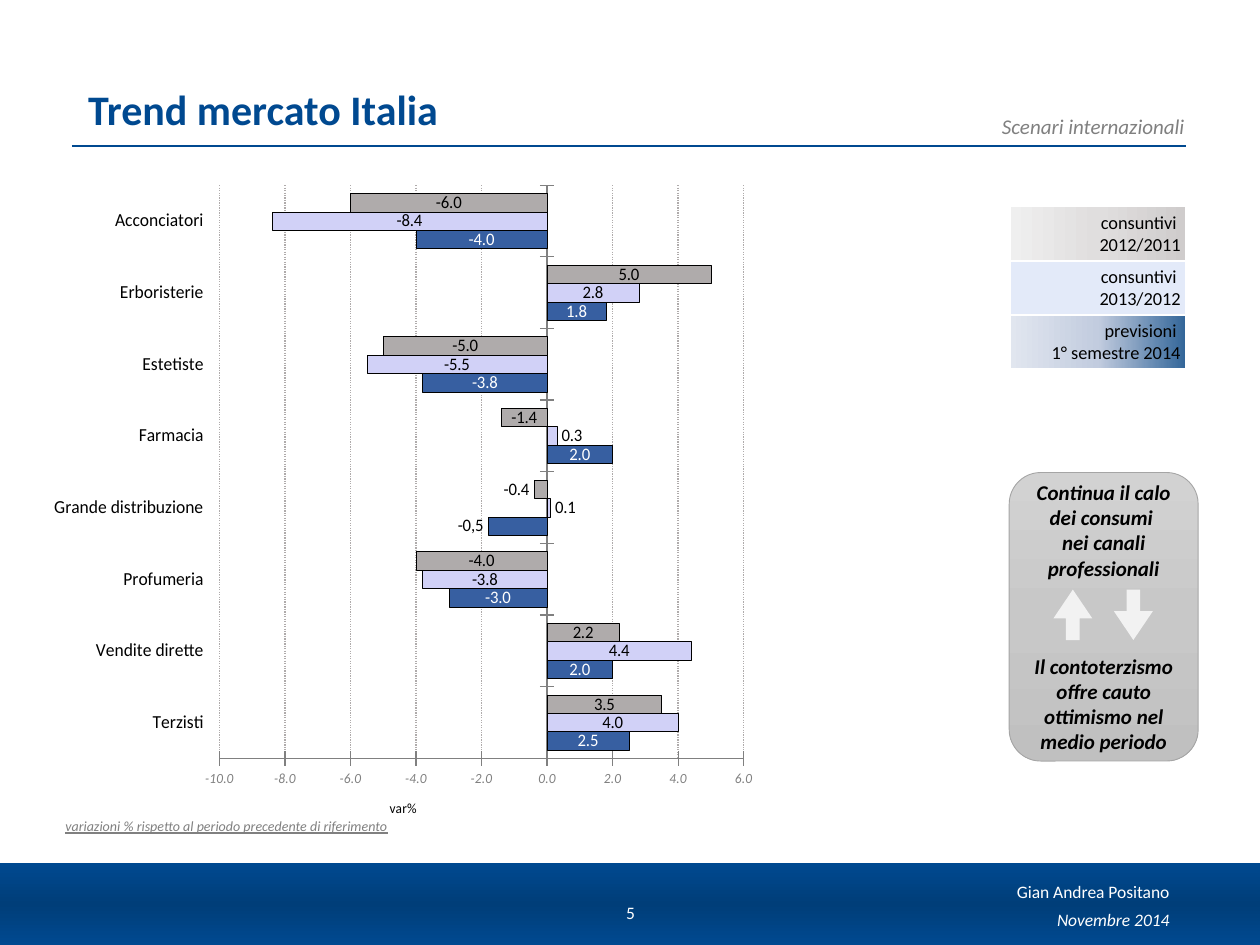
from lxml.etree import SubElement
from pptx import Presentation
from pptx.chart.data import CategoryChartData
from pptx.dml.color import RGBColor
from pptx.enum.chart import XL_CHART_TYPE, XL_LABEL_POSITION, XL_TICK_LABEL_POSITION, XL_TICK_MARK
from pptx.enum.dml import MSO_LINE
from pptx.enum.shapes import MSO_CONNECTOR, MSO_SHAPE
from pptx.enum.text import MSO_ANCHOR, PP_ALIGN
from pptx.oxml import parse_xml
from pptx.oxml.ns import nsdecls, qn
from pptx.util import Inches, Pt

BLUE, GRAY, WHITE, BLACK = "004990", "808080", "FFFFFF", "000000"
CHANNELS = ["Terzisti ", "Vendite dirette ", "Profumeria ", "Grande distribuzione ",
            "Farmacia ", "Estetiste ", "Erboristerie ", "Acconciatori "]
SERIES = [
    ("Series 1", [2.5, 2, -3, -1.8, 2, -3.8, 1.8, -4], "375FA1", WHITE, {3: "-0,5"}),
    ("Series 2", [4, 4.4, -3.8, 0.1, 0.3, -5.5, 2.8, -8.4], "D1D1F7", BLACK, {3: None, 4: None}),
    ("Series 3", [3.5, 2.2, -4, -0.4, -1.4, -5, 5, -6], "AFABAB", BLACK, {3: None}),
]
PERIODS = [
    ("consuntivi \n2012/2011", ["CFCCCC", "E0DEDE", "EFEFEF"]),
    ("consuntivi \n2013/2012", ["E3EAF9"]),
    ("previsioni \n1° semestre 2014", ["336699", "C2CCDF", "E1E6EF"]),
]


def rgb(value):
    """Return the colour for a hex string."""
    return RGBColor.from_string(value)


def style_font(font, size, color=BLACK, bold=False, italic=False, underline=False):
    """Set typeface, size, colour and emphasis of a font."""
    font.name, font.size = "Calibri", Pt(size)
    font.color.rgb = rgb(color)
    font.bold, font.italic = bold, italic
    if underline:
        font.underline = True


def write(paragraph, text, align, size, **style):
    """Write text into a paragraph, with a line break at each newline."""
    paragraph.alignment = align
    for index, line in enumerate(text.split("\n")):
        if index:
            paragraph.add_line_break()
        run = paragraph.add_run()
        run.text = line
        style_font(run.font, size, **style)


def add_text(slide, box, text, size, align=PP_ALIGN.LEFT, anchor=MSO_ANCHOR.TOP, side=0.1, edge=0.05, **style):
    """Add a wrapping text box."""
    frame = slide.shapes.add_textbox(*map(Inches, box)).text_frame
    frame.word_wrap, frame.vertical_anchor = True, anchor
    frame.margin_left = frame.margin_right = Inches(side)
    frame.margin_top = frame.margin_bottom = Inches(edge)
    write(frame.paragraphs[0], text, align, size, **style)


def apply_fill(fill, properties, colors, angle=90):
    """Fill with one colour or with an evenly spaced linear gradient."""
    if len(colors) == 1:
        fill.solid()
        fill.fore_color.rgb = rgb(colors[0])
        return
    fill.background()
    gradient = parse_xml(f'<a:gradFill {nsdecls("a")} rotWithShape="1"><a:gsLst/>'
                         f'<a:lin ang="{angle * 60000}" scaled="0"/></a:gradFill>')
    for index, color in enumerate(colors):
        stop = SubElement(gradient[0], qn("a:gs"), pos=str(100000 * index // (len(colors) - 1)))
        SubElement(stop, qn("a:srgbClr"), val=color)
    properties.replace(properties.find(qn("a:noFill")), gradient)


def add_shape(slide, kind, box, colors, line=None, adjustments=()):
    """Add a filled preset shape."""
    shape = slide.shapes.add_shape(kind, *map(Inches, box))
    shape.shadow.inherit = False
    apply_fill(shape.fill, shape._element.spPr, colors)
    if line:
        shape.line.color.rgb = rgb(line)
        shape.line.width = Pt(0.5)
    else:
        shape.line.fill.background()
    for index, value in enumerate(adjustments):
        shape.adjustments[index] = value


def add_rule(slide, left, right, top):
    """Add the thin line under the title."""
    rule = slide.shapes.add_connector(MSO_CONNECTOR.STRAIGHT, *map(Inches, (left, top, right, top)))
    rule.line.color.rgb = rgb(BLUE)
    rule.line.width = Pt(0.75)
    SubElement(rule._element.spPr, qn("a:effectLst"))


def add_legend(slide, left, top, width, row_height):
    """Add the table that explains the bar colours."""
    size = (left, top, width, row_height * len(PERIODS))
    table = slide.shapes.add_table(len(PERIODS), 1, *map(Inches, size)).table
    table.first_row = table.horz_banding = False
    for row, (text, colors) in enumerate(PERIODS):
        cell = table.cell(row, 0)
        cell.margin_left = cell.margin_right = cell.margin_top = cell.margin_bottom = Inches(0.04)
        write(cell.text_frame.paragraphs[0], text, PP_ALIGN.RIGHT, 10.5)
        properties = cell._tc.get_or_add_tcPr()
        apply_fill(cell.fill, properties, colors, 180)
        for index, side in enumerate("LRTB"):
            properties.insert(index, parse_xml(
                f'<a:ln{side} {nsdecls("a")} w="12700"><a:solidFill>'
                f'<a:srgbClr val="{WHITE}"/></a:solidFill></a:ln{side}>'))


def style_series(series, color, label_color, outside):
    """Colour the bars and place their value labels."""
    series.format.fill.solid()
    series.format.fill.fore_color.rgb = rgb(color)
    series.format.line.color.rgb = rgb(BLACK)
    series.format.line.width = Pt(0.25)
    series.invert_if_negative = False
    labels = series.data_labels
    labels.show_value = True
    labels.number_format, labels.number_format_is_linked = "0.0", False
    labels.position = XL_LABEL_POSITION.CENTER
    style_font(labels.font, 10, label_color)
    for point, text in outside.items():
        label = series.points[point].data_label
        if text:
            write(label.text_frame.paragraphs[0], text, None, 10)
        else:
            style_font(label.font, 10)
        label.position = XL_LABEL_POSITION.OUTSIDE_END


def style_axes(chart):
    """Set scale, ticks, gridlines and fonts of both axes."""
    category, value = chart.category_axis, chart.value_axis
    category.tick_label_position = XL_TICK_LABEL_POSITION.LOW
    style_font(category.tick_labels.font, 10.5)
    value.minimum_scale, value.maximum_scale, value.major_unit = -10, 6, 2
    value.tick_labels.number_format = "#,##0.0"
    value.tick_labels.number_format_is_linked = False
    style_font(value.tick_labels.font, 8, GRAY, italic=True)
    write(value.axis_title.text_frame.paragraphs[0], "var%", None, 8)
    grid = value.major_gridlines.format.line
    grid.color.rgb, grid.width, grid.dash_style = rgb("AFABAB"), Pt(0.75), MSO_LINE.ROUND_DOT
    for axis in (category, value):
        axis.major_tick_mark = XL_TICK_MARK.CROSS
        axis.format.line.color.rgb = rgb(GRAY)


def add_trend_chart(slide, box):
    """Add the bar chart of changes by sales channel."""
    data = CategoryChartData()
    data.categories = CHANNELS
    for name, values, *_ in SERIES:
        data.add_series(name, values)
    chart = slide.shapes.add_chart(XL_CHART_TYPE.BAR_CLUSTERED, *map(Inches, box), data).chart
    chart.has_legend = chart.has_title = False
    style_font(chart.font, 10.5)
    plot = chart.plots[0]
    plot.gap_width, plot.overlap, plot.vary_by_categories = 88, 0, False
    for series, (_, _, color, label_color, outside) in zip(plot.series, SERIES):
        style_series(series, color, label_color, outside)
    style_axes(chart)
    area = chart._chartSpace.chart.plotArea
    for old in area.findall(qn("c:layout")):
        area.remove(old)
    layout = parse_xml(f'<c:layout {nsdecls("c")}><c:manualLayout/></c:layout>')
    for tag, setting in (("layoutTarget", "inner"), ("xMode", "edge"), ("yMode", "edge"),
                         ("x", "0.18"), ("y", "0.04"), ("w", "0.72"), ("h", "0.865")):
        SubElement(layout[0], qn(f"c:{tag}"), val=setting)
    area.insert(0, layout)


def main():
    """Build the slide and save it."""
    presentation = Presentation()
    presentation.slide_width, presentation.slide_height = Inches(10), Inches(7.5)
    slide = presentation.slides.add_slide(presentation.slide_layouts[6])
    right, center, middle = PP_ALIGN.RIGHT, PP_ALIGN.CENTER, MSO_ANCHOR.MIDDLE
    add_rule(slide, 0.57, 9.41, 1.16)
    add_text(slide, (6.1, 0.85, 3.4, 0.3), "Scenari internazionali", 12, right, color=GRAY, italic=True)
    add_shape(slide, MSO_SHAPE.RECTANGLE, (-0.19, 6.85, 10.3, 0.65), [BLUE, "003E79", BLUE])
    add_text(slide, (7.86, 7.19, 1.52, 0.21), "Novembre 2014", 10, right, middle, color=WHITE, italic=True)
    add_text(slide, (7.85, 6.94, 1.53, 0.31), "Gian Andrea Positano", 10, right, color=WHITE)
    add_text(slide, (4.72, 7.04, 0.57, 0.4), "5", 10, center, middle, color=WHITE)
    add_text(slide, (0.5, 0.11, 9, 0.95), "Trend mercato Italia", 24, anchor=MSO_ANCHOR.BOTTOM,
             side=0.2, edge=0, color=BLUE, bold=True)
    add_text(slide, (0.42, 6.44, 3.01, 0.24), "variazioni % rispetto al periodo precedente di riferimento",
             8, color=GRAY, italic=True, underline=True)
    add_trend_chart(slide, (0.43, 1.26, 6.05, 5.26))
    add_shape(slide, MSO_SHAPE.ROUNDED_RECTANGLE, (8.01, 3.75, 1.5, 2.29),
              ["D2D2D2", "C8C8C8", "C0C0C0"], "A5A5A5")
    add_legend(slide, 8.02, 1.64, 1.39, 0.43)
    for top, message in ((3.75, "Continua il calo dei consumi \nnei canali professionali"),
                         (5.13, "Il contoterzismo offre cauto ottimismo nel medio periodo")):
        add_text(slide, (8.01, top, 1.5, 0.91), message, 12, center, middle, bold=True, italic=True)
    for kind, left in ((MSO_SHAPE.UP_ARROW, 8.36), (MSO_SHAPE.DOWN_ARROW, 8.84)):
        add_shape(slide, kind, (left, 4.68, 0.31, 0.4), ["F2F2F2"], adjustments=(0.35, 0.74))
    presentation.save("out.pptx")


if __name__ == "__main__":
    main()
